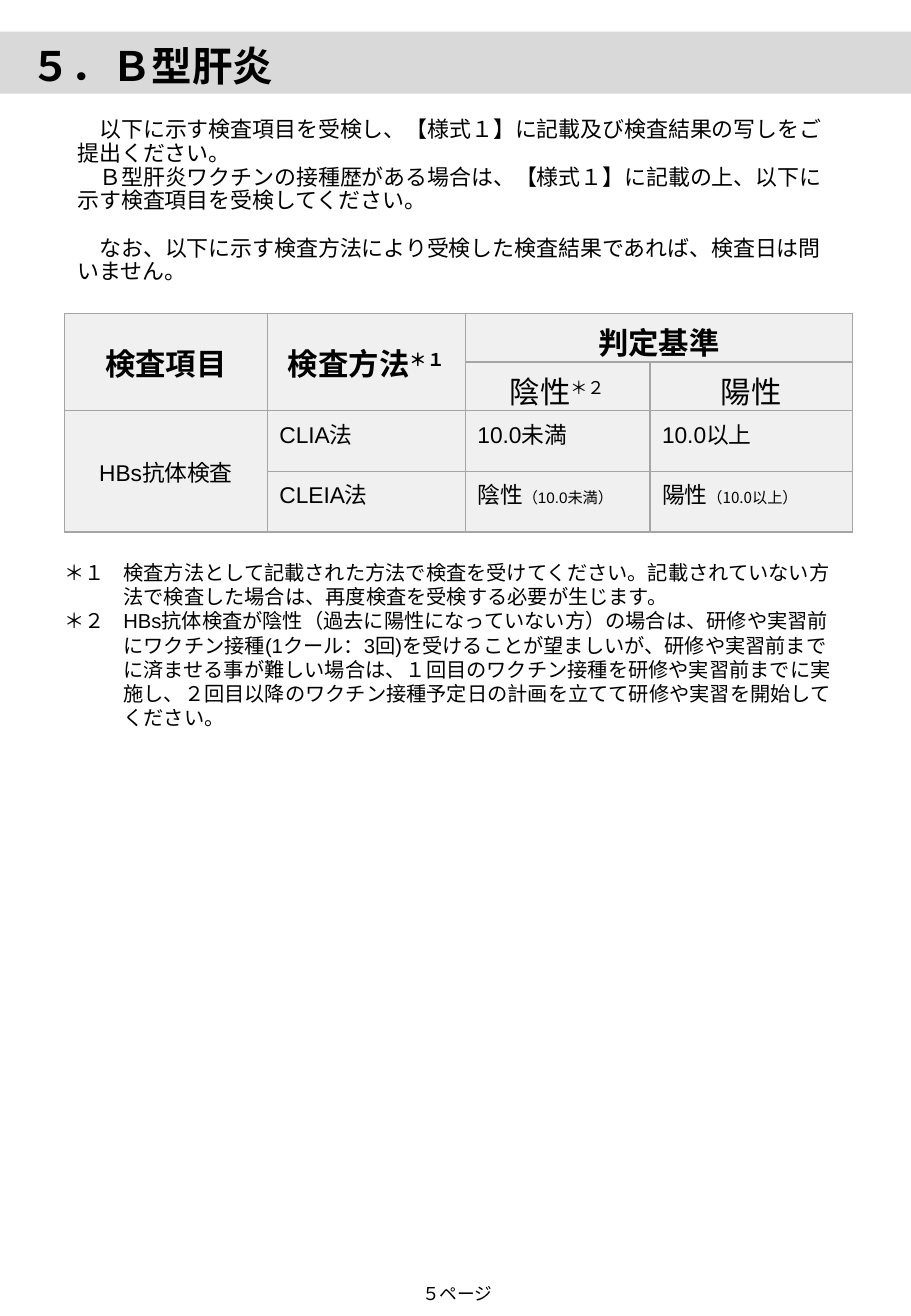
from dataclasses import dataclass

from lxml import etree
from pptx import Presentation
from pptx.dml.color import RGBColor
from pptx.enum.shapes import MSO_SHAPE
from pptx.enum.text import MSO_ANCHOR, PP_ALIGN
from pptx.oxml.ns import qn
from pptx.util import Cm, Pt

RECTANGLE = MSO_SHAPE.RECTANGLE
TOP, MIDDLE = MSO_ANCHOR.TOP, MSO_ANCHOR.MIDDLE
LEFT, CENTER = PP_ALIGN.LEFT, PP_ALIGN.CENTER


@dataclass(frozen=True)
class Theme:
    """Colours, fonts and type sizes of the page."""
    ink: str = "000000"
    band: str = "D9D9D9"
    cell: str = "F0F0F0"
    border: str = "A5A5A5"
    font: str = "Arial"
    head_font: str = "Calibri"
    small_font: str = "Noto Sans CJK JP"
    title: float = 24
    head: float = 18
    cell_text: float = 13.5
    intro: float = 13
    note: float = 12
    footer: float = 10.5
    small: float = 9


THEME = Theme()
HEAD = dict(size=THEME.head, font=THEME.head_font)
BOLD = dict(HEAD, bold=True)
BODY = dict(size=THEME.cell_text)
SMALL = dict(size=THEME.small)

INTRO = [
    "以下に示す検査項目を受検し、【様式１】に記載及び検査結果の写しをご提出ください。",
    "Ｂ型肝炎ワクチンの接種歴がある場合は、【様式１】に記載の上、以下に示す検査項目を受検してください。",
    "なお、以下に示す検査方法により受検した検査結果であれば、検査日は問いません。",
]
NOTES = [
    "＊１\t検査方法として記載された方法で検査を受けてください。記載されていない方法で検査した場合は、"
    "再度検査を受検する必要が生じます。",
    "＊２\tHBs抗体検査が陰性（過去に陽性になっていない方）の場合は、研修や実習前にワクチン接種"
    "(1クール：3回)を受けることが望ましいが、研修や実習前までに済ませる事が難しい場合は、"
    "１回目のワクチン接種を研修や実習前までに実施し、２回目以降のワクチン接種予定日の計画を立てて"
    "研修や実習を開始してください。",
]
COLUMNS = [4.24, 4.14, 3.86, 4.24]
ROWS = [0.89, 0.89, 1.27, 1.27]
MERGES = [(0, 0, 1, 0), (0, 1, 1, 1), (0, 2, 0, 3), (2, 0, 3, 0)]
CELLS = {
    (0, 0): [("検査項目", BOLD)],
    (0, 1): [("検査方法", BOLD), ("＊１", dict(BOLD, raised=True))],
    (0, 2): [("判定基準", BOLD)],
    (1, 2): [("陰性", HEAD), ("＊２", dict(HEAD, raised=True))],
    (1, 3): [("陽性", HEAD)],
    (2, 0): [("HBs抗体検査", BODY)],
    (2, 1): [("CLIA法", BODY)],
    (2, 2): [("10.0未満", BODY)],
    (2, 3): [("10.0以上", BODY)],
    (3, 1): [("CLEIA法", BODY)],
    (3, 2): [("陰性", BODY), ("（10.0未満）", SMALL)],
    (3, 3): [("陽性", BODY), ("（10.0以上）", dict(SMALL, font=THEME.small_font))],
}


def add_span(para, text, size, font=THEME.font, bold=False, raised=False):
    """Add one formatted run of text to a paragraph."""
    span = para.add_run()
    span.text = text
    span.font.size = Pt(size)
    span.font.name = font
    span.font.bold = bold
    span.font.color.rgb = RGBColor.from_string(THEME.ink)
    if raised:
        span.font._element.set("baseline", "30000")


class Page:
    """Holds the theme and the current slide."""

    def __init__(self, deck, theme):
        self.theme = theme
        self.width = deck.slide_width
        self.shapes = deck.slides.add_slide(deck.slide_layouts[6]).shapes

    def band(self, top, height):
        """Draw a plain band across the page."""
        band = self.shapes.add_shape(RECTANGLE, 0, Cm(top), self.width, Cm(height))
        band.shadow.inherit = False
        band.fill.solid()
        band.fill.fore_color.rgb = RGBColor.from_string(self.theme.band)
        band.line.fill.background()

    def text(self, lines, left, top, width, height, size, bold=False, align=LEFT,
             anchor=TOP, margin=0, indent=0, spacing=None):
        """Place a text box and return its paragraphs."""
        box = self.shapes.add_textbox(Cm(left), Cm(top), Cm(width), Cm(height))
        frame = box.text_frame
        frame.word_wrap = True
        frame.vertical_anchor = anchor
        for index, line in enumerate(lines):
            para = frame.add_paragraph() if index else frame.paragraphs[0]
            para.alignment = align
            para.line_spacing = spacing
            properties = para._p.get_or_add_pPr()
            properties.set("marL", str(Cm(margin)))
            properties.set("indent", str(Cm(indent)))
            add_span(para, line, size, bold=bold)
        return frame.paragraphs

    def border(self, cell):
        """Draw the four borders of a table cell."""
        properties = cell._tc.get_or_add_tcPr()
        for index, side in enumerate(("a:lnL", "a:lnR", "a:lnT", "a:lnB")):
            line = etree.Element(qn(side), w=str(Pt(1)))
            fill = etree.SubElement(line, qn("a:solidFill"))
            etree.SubElement(fill, qn("a:srgbClr"), val=self.theme.border)
            properties.insert(index, line)

    def table(self, left, top):
        """Place the table of test methods and criteria."""
        table = self.shapes.add_table(len(ROWS), len(COLUMNS), Cm(left), Cm(top),
                                      Cm(sum(COLUMNS)), Cm(sum(ROWS))).table
        for column, width in zip(table.columns, COLUMNS):
            column.width = Cm(width)
        for row, height in zip(table.rows, ROWS):
            row.height = Cm(height)
        for cell in table.iter_cells():
            cell.fill.solid()
            cell.fill.fore_color.rgb = RGBColor.from_string(self.theme.cell)
            self.border(cell)
        for first_row, first_column, last_row, last_column in MERGES:
            table.cell(first_row, first_column).merge(table.cell(last_row, last_column))
        for (row, column), spans in CELLS.items():
            cell = table.cell(row, column)
            centred = row < 2 or column == 0
            cell.vertical_anchor = MIDDLE if centred else TOP
            para = cell.text_frame.paragraphs[0]
            para.alignment = CENTER if centred else LEFT
            for text, style in spans:
                add_span(para, text, **style)


def main():
    """Build the page and save it."""
    deck = Presentation()
    deck.slide_width, deck.slide_height = Cm(19.05), Cm(27.51)
    page = Page(deck, THEME)
    page.band(0.66, 1.3)
    intro = page.text(INTRO, 1.37, 1.88, 16.43, 4.67, THEME.intro,
                      anchor=MIDDLE, indent=0.46, spacing=0.9)
    intro[-1].space_before = Pt(14)
    page.text(["５．Ｂ型肝炎"], 0.38, 0.74, 14.63, 1.27, THEME.title, bold=True)
    page.table(1.35, 6.55)
    page.text(NOTES, 1.09, 11.58, 16.69, 3.84, THEME.note, margin=1.24, indent=-1.24)
    page.text(["５ページ"], 6.76, 26.7, 5.61, 0.71, THEME.footer, align=CENTER)
    deck.save("out.pptx")


if __name__ == "__main__":
    main()
